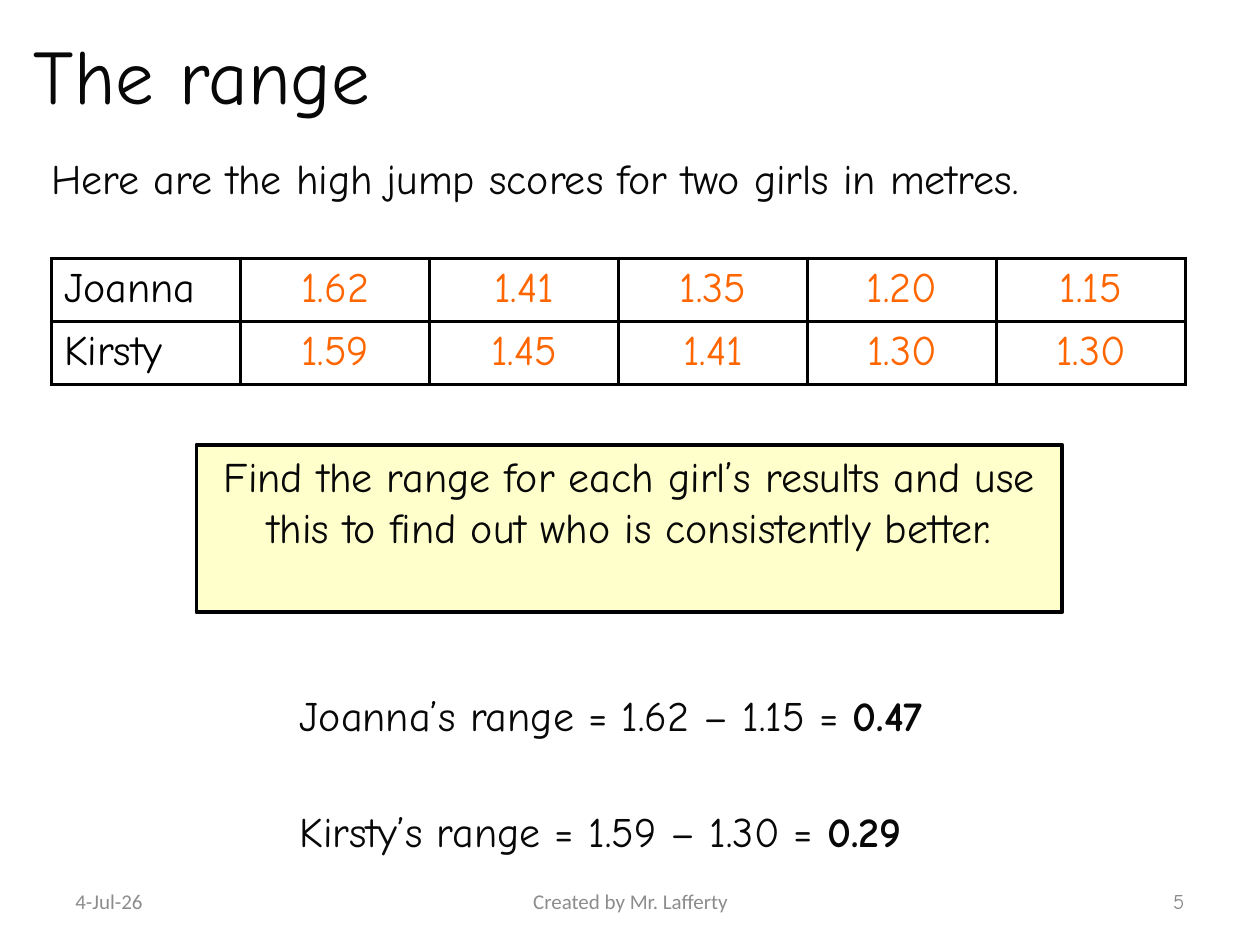
from pptx import Presentation
from pptx.dml.color import RGBColor
from pptx.enum.shapes import MSO_SHAPE
from pptx.enum.text import MSO_ANCHOR, PP_ALIGN
from pptx.oxml import parse_xml
from pptx.oxml.ns import nsdecls
from pptx.util import Inches, Pt

LEFT, MID, RIGHT = PP_ALIGN.LEFT, PP_ALIGN.CENTER, PP_ALIGN.RIGHT
TOP, CENTRE = MSO_ANCHOR.TOP, MSO_ANCHOR.MIDDLE
RECT = MSO_SHAPE.RECTANGLE
INK, BLACK, ORANGE, GREY = "080808", "000000", "FF6600", "8C8C8C"
EDGE = 2.25

# Content
SCORES = [
    ("Joanna", "1.62", "1.41", "1.35", "1.20", "1.15"),
    ("Kirsty", "1.59", "1.45", "1.41", "1.30", "1.30"),
]
TASK = ("Find the range for each girl’s results and use "
        "this to find out who is consistently better.")
RANGES = [
    ("Joanna’s range = 1.62 – 1.15 = ", "0.47"),
    ("Kirsty’s range = 1.59 – 1.30 = ", "0.29"),
]
BODY = {"name": "Comic Neue", "size": Pt(24)}
TITLE = {**BODY, "size": Pt(44)}
FOOT = {"name": "Calibri", "size": Pt(12)}
PAGE = {**FOOT, "name": "Comic Neue"}

# text, place, format, colour, alignment, anchor, wrap
LABELS = [
    ("The range", (0.17, 0.17, 6.01, 0.58), TITLE, INK, LEFT, TOP, True),
    ("Here are the high jump scores for two girls in metres.",
     (0.31, 1.16, 8.63, 0.5), BODY, INK, LEFT, TOP, False),
    ("4-Jul-26", (0.5, 6.95, 2.33, 0.4), FOOT, GREY, LEFT, CENTRE, True),
    ("Created by Mr. Lafferty", (3.42, 6.95, 3.17, 0.4),
     FOOT, GREY, MID, CENTRE, True),
    ("5", (7.17, 6.95, 2.33, 0.4), PAGE, "898989", RIGHT, CENTRE, True),
]


def paint(code):
    return RGBColor.from_string(code)


def write(frame, text, form, color, align=LEFT, bold=""):
    para = frame.paragraphs[0]
    para.alignment = align
    for part, heavy in ((text, False), (bold, True)):
        if part:
            run = para.add_run()
            run.text = part
            for key, value in {**form, "bold": heavy}.items():
                setattr(run.font, key, value)
            run.font.color.rgb = paint(color)


def label(text, place, form, color, align, anchor, wrap, bold=""):
    frame = slide.shapes.add_textbox(*map(Inches, place)).text_frame
    frame.word_wrap = wrap
    frame.vertical_anchor = anchor
    write(frame, text, form, color, align, bold)


def border(cell):
    props = cell._tc.get_or_add_tcPr()
    for n, side in enumerate(("lnL", "lnR", "lnT", "lnB")):
        props.insert(n, parse_xml(
            f'<a:{side} {nsdecls("a")} w="{Pt(EDGE)}"><a:solidFill>'
            f'<a:srgbClr val="{BLACK}"/></a:solidFill></a:{side}>'))


deck = Presentation()
deck.slide_width, deck.slide_height = Inches(10), Inches(7.5)
slide = deck.slides.add_slide(deck.slide_layouts[6])

# Title, lead-in and footer
for item in LABELS:
    label(*item)

# Score table
rows, cols = len(SCORES), len(SCORES[0])
grid = slide.shapes.add_table(
    rows, cols, Inches(0.41), Inches(2.05),
    Inches(1.5 * cols), Inches(0.48 * rows)).table
grid.first_row = grid.horz_banding = False
for r, line in enumerate(SCORES):
    for c, text in enumerate(line):
        cell = grid.cell(r, c)
        cell.fill.background()
        border(cell)
        color, align = (ORANGE, MID) if c else (BLACK, LEFT)
        write(cell.text_frame, text, BODY, color, align)

# Task box
box = slide.shapes.add_shape(
    RECT, *map(Inches, (1.56, 3.53, 6.87, 1.33)))
box.shadow.inherit = False
box.fill.solid()
box.fill.fore_color.rgb = paint("FFFFCC")
box.line.color.rgb = paint(BLACK)
box.line.width = Pt(EDGE)
box.text_frame.word_wrap = True
box.text_frame.vertical_anchor = TOP
write(box.text_frame, TASK, BODY, INK, MID)

# Worked ranges
for n, (sum_text, answer) in enumerate(RANGES):
    label(sum_text, (2.28, 5.42 + 0.92 * n, 5.5, 0.5),
          BODY, INK, LEFT, TOP, False, answer)

deck.save("out.pptx")
